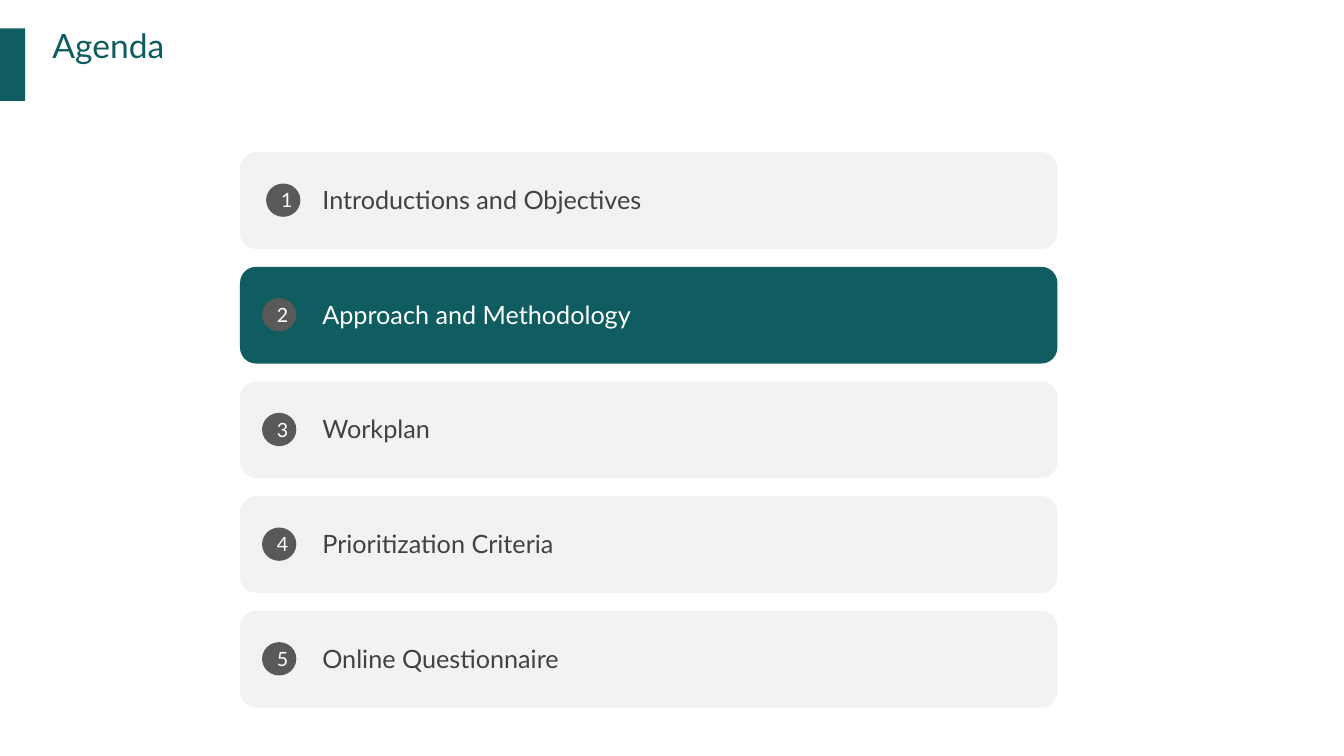
"""Build an agenda slide with five numbered rows, one of them active."""
from dataclasses import dataclass

from pptx import Presentation
from pptx.dml.color import RGBColor as Rgb
from pptx.enum.shapes import MSO_SHAPE as Form
from pptx.enum.text import MSO_ANCHOR as Anchor, MSO_AUTO_SIZE as Fit, PP_ALIGN as Align
from pptx.shapes.autoshape import Shape
from pptx.slide import Slide
from pptx.text.text import TextFrame as Frame
from pptx.util import Pt


@dataclass(frozen=True)
class Theme:
    font: str = "Lato"
    teal: str = "0F5D61"
    pale: str = "F2F2F2"
    grey: str = "595959"
    ink: str = "414141"
    white: str = "FFFFFF"
    head: float = 24
    body: float = 18
    digit: float = 14


@dataclass(frozen=True)
class Box:
    left: float
    top: float
    width: float
    height: float

    def scale(self) -> tuple[Pt, Pt, Pt, Pt]:
        return Pt(self.left), Pt(self.top), Pt(self.width), Pt(self.height)


@dataclass(frozen=True)
class Item:
    text: str
    active: bool = False
    dot_left: float = 187.2
    width: float = 499


THEME = Theme()
TOP, PITCH = 108.7, 81.9
ITEMS = (
    Item("Introductions and Objectives", dot_left=190.1, width=382.3),
    Item("Approach and Methodology", active=True),
    Item("Workplan"),
    Item("Prioritization Criteria"),
    Item("Online Questionnaire"),
)


def add_form(slide: Slide, form: Form, box: Box, fill: str) -> Shape:
    shape = slide.shapes.add_shape(form, *box.scale())
    shape.shadow.inherit = False
    shape.fill.solid()
    shape.fill.fore_color.rgb = Rgb.from_string(fill)
    shape.line.fill.background()
    return shape


def write(frame: Frame, text: str, size: float, tint: str, align: Align = Align.LEFT) -> None:
    line = frame.paragraphs[0]
    line.alignment = align
    run = line.add_run()
    run.text = text
    run.font.name = THEME.font
    run.font.size = Pt(size)
    run.font.color.rgb = Rgb.from_string(tint)


def add_title(slide: Slide, text: str) -> None:
    title = slide.shapes.title
    title.left, title.top, title.width, title.height = Box(37.4, 18, 903.6, 57.6).scale()
    frame = title.text_frame
    frame.margin_left = frame.margin_top = frame.margin_right = frame.margin_bottom = 0
    frame.vertical_anchor = Anchor.TOP
    frame.auto_size = Fit.NONE
    frame.word_wrap = True
    write(frame, text, THEME.head, THEME.teal)


def add_item(slide: Slide, rank: int, item: Item) -> None:
    top = TOP + (rank - 1) * PITCH
    fill, ink = (THEME.teal, THEME.white) if item.active else (THEME.pale, THEME.ink)
    add_form(slide, Form.ROUNDED_RECTANGLE, Box(171.4, top, 583.9, 69.1), fill)

    dot = add_form(slide, Form.OVAL, Box(item.dot_left, top + 22.4, 24.5, 23.8), THEME.grey)
    dot.text_frame.vertical_anchor = Anchor.MIDDLE
    write(dot.text_frame, str(rank), THEME.digit, THEME.white, Align.CENTER)

    label = slide.shapes.add_textbox(*Box(223.2, top + 19.4, item.width, 29).scale())
    label.text_frame.word_wrap = True
    label.text_frame.auto_size = Fit.SHAPE_TO_FIT_TEXT
    write(label.text_frame, item.text, THEME.body, ink)


def main() -> None:
    deck = Presentation()
    deck.slide_width, deck.slide_height = Pt(960), Pt(540)
    slide = deck.slides.add_slide(deck.slide_layouts[5])
    add_form(slide, Form.RECTANGLE, Box(-0.7, 20.2, 18.7, 51.8), THEME.teal)
    add_title(slide, "Agenda")
    for rank, item in enumerate(ITEMS, 1):
        add_item(slide, rank, item)
    deck.save("out.pptx")


if __name__ == "__main__":
    main()
